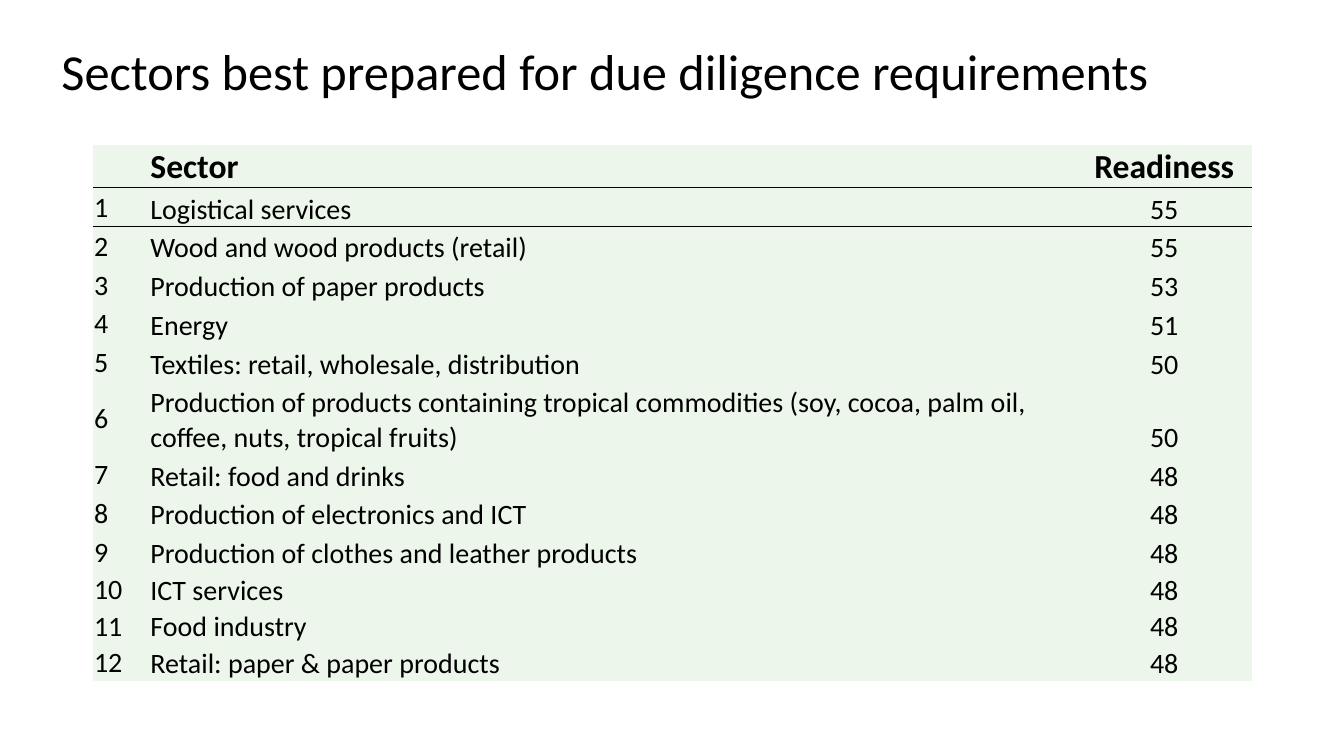
from lxml import etree
from pptx import Presentation
from pptx.dml.color import RGBColor
from pptx.enum.text import MSO_ANCHOR, PP_ALIGN
from pptx.oxml.ns import qn
from pptx.util import Cm, Pt

BLACK = RGBColor(0x00, 0x00, 0x00)
PALE_GREEN = RGBColor(0xEC, 0xF6, 0xEA)
FONT = "Calibri"
MIDDLE, BOTTOM = MSO_ANCHOR.MIDDLE, MSO_ANCHOR.BOTTOM
LEFT, CENTER = PP_ALIGN.LEFT, PP_ALIGN.CENTER
PLAIN_TABLE_STYLE = "{2D5ABB26-0587-4C30-8999-92F81FD0307C}"

TITLE = "Sectors best prepared for due diligence requirements"
HEADER = ("", "Sector", "Readiness")
SECTORS = [
    ("Logistical services", 55),
    ("Wood and wood products (retail)", 55),
    ("Production of paper products", 53),
    ("Energy", 51),
    ("Textiles: retail, wholesale, distribution", 50),
    ("Production of products containing tropical commodities "
     "(soy, cocoa, palm oil, coffee, nuts, tropical fruits)", 50),
    ("Retail: food and drinks", 48),
    ("Production of electronics and ICT", 48),
    ("Production of clothes and leather products", 48),
    ("ICT services", 48),
    ("Food industry", 48),
    ("Retail: paper & paper products", 48),
]
COLUMN_WIDTHS = (1.42, 23.36, 4.44)
ROW_HEIGHTS = [1.07] + [0.98] * 5 + [1.83] + [0.98] * 3 + [0.92] * 3
COLUMN_ANCHORS = (MIDDLE, BOTTOM, BOTTOM)
COLUMN_ALIGNMENTS = (LEFT, LEFT, CENTER)
ROW_BORDERS = {0: ("a:lnB",), 1: ("a:lnT", "a:lnB")}


def format_text(para, size, bold=False):
    for span in para.runs:
        span.font.name = FONT
        span.font.size = Pt(size)
        span.font.bold = bold
        span.font.color.rgb = BLACK


def add_title(page):
    box = page.shapes.add_textbox(Cm(1.3), Cm(0.56), Cm(29.21), Cm(2.64))
    frame = box.text_frame
    frame.word_wrap = True
    frame.vertical_anchor = MIDDLE
    frame.text = TITLE
    para = frame.paragraphs[0]
    para.line_spacing = 0.9
    format_text(para, 36)


def add_border(cell, side):
    """Add a thin black line; call before the cell gets its fill."""
    line = etree.SubElement(cell._tc.get_or_add_tcPr(), qn(side), w=str(Pt(1)))
    fill = etree.SubElement(line, qn("a:solidFill"))
    etree.SubElement(fill, qn("a:srgbClr"), val=str(BLACK))


def fill_cell(cell, text, row, column):
    cell.margin_left = cell.margin_right = cell.margin_top = Cm(0.03)
    cell.margin_bottom = 0
    cell.vertical_anchor = COLUMN_ANCHORS[column] if row else BOTTOM
    for side in ROW_BORDERS.get(row, ()):
        add_border(cell, side)
    cell.fill.solid()
    cell.fill.fore_color.rgb = PALE_GREEN
    cell.text = text
    para = cell.text_frame.paragraphs[0]
    para.alignment = COLUMN_ALIGNMENTS[column]
    format_text(para, 20 if row else 24, bold=row == 0)


def add_readiness_table(page):
    rows = [HEADER] + [(str(rank), sector, str(score))
                       for rank, (sector, score) in enumerate(SECTORS, 1)]
    frame = page.shapes.add_table(
        len(rows), len(HEADER), Cm(2.34), Cm(3.66),
        Cm(sum(COLUMN_WIDTHS)), Cm(sum(ROW_HEIGHTS)))
    table = frame.table
    table.first_row = table.horz_banding = False
    table._tbl.tblPr.find(qn("a:tableStyleId")).text = PLAIN_TABLE_STYLE
    for column, width in zip(table.columns, COLUMN_WIDTHS):
        column.width = Cm(width)
    for row, height in zip(table.rows, ROW_HEIGHTS):
        row.height = Cm(height)
    for row, texts in enumerate(rows):
        for column, text in enumerate(texts):
            fill_cell(table.cell(row, column), text, row, column)


def main():
    deck = Presentation()
    deck.slide_width = Cm(33.87)
    deck.slide_height = Cm(19.05)
    page = deck.slides.add_slide(deck.slide_layouts[6])
    add_title(page)
    add_readiness_table(page)
    deck.save("out.pptx")


if __name__ == "__main__":
    main()
